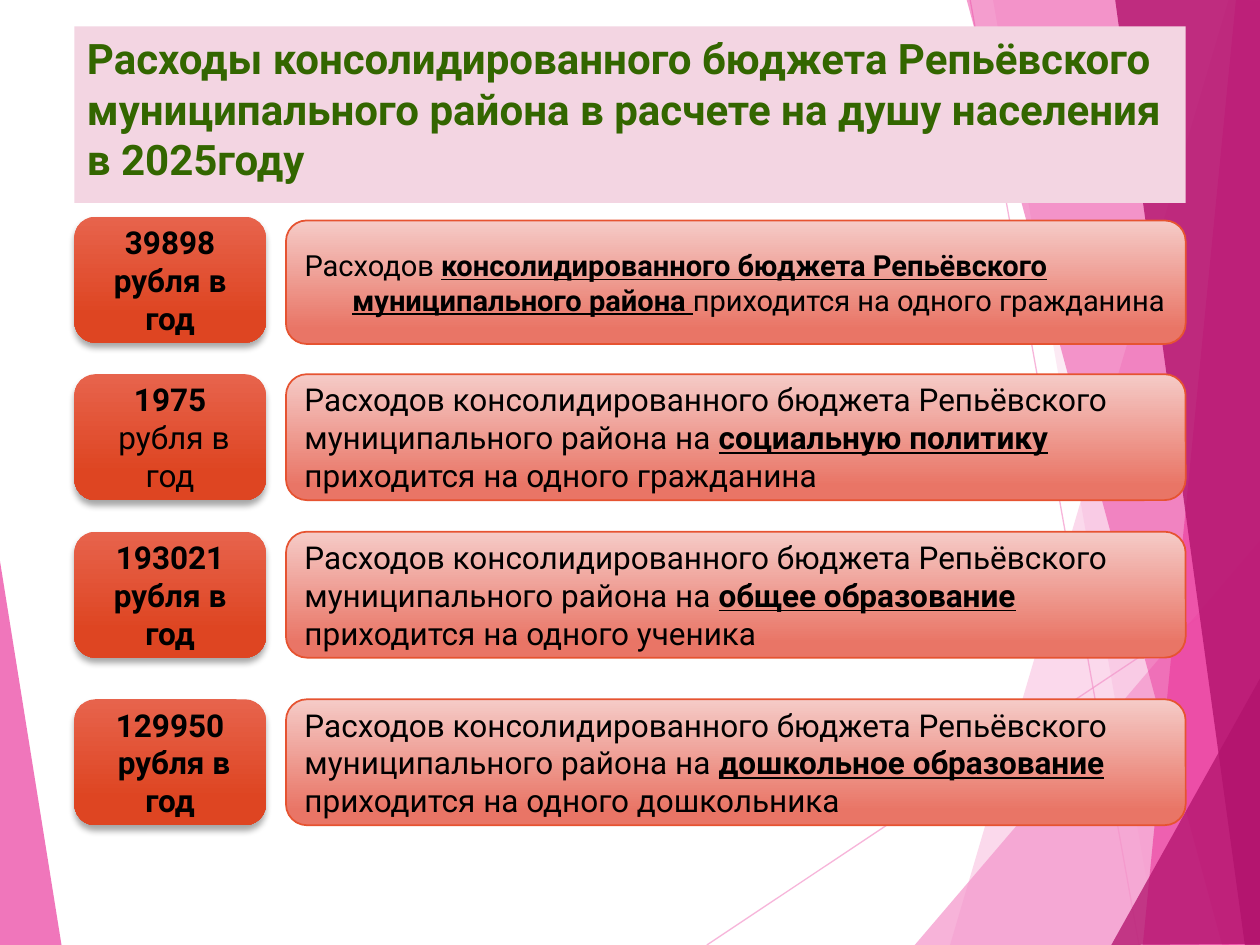
from dataclasses import dataclass

from lxml.etree import SubElement
from pptx import Presentation
from pptx.dml.color import RGBColor
from pptx.enum.shapes import MSO_CONNECTOR, MSO_SHAPE
from pptx.enum.text import MSO_ANCHOR, MSO_AUTO_SIZE, PP_ALIGN
from pptx.oxml.ns import qn
from pptx.util import Inches, Pt


@dataclass(frozen=True)
class Theme:
    font: str = "Roboto"
    title_size: float = 24
    text_size: float = 18
    lead_size: float = 16.6
    title_text: str = "336600"
    title_fill: str = "F3D5E2"
    text: str = "000000"
    outline: str = "E65331"
    pale_pink: str = "F496CB"
    pink: str = "EB3D9F"
    magenta: str = "B2136D"
    card_gradient: tuple = ((0, "F5CBC7"), (0.88, "E97566"))
    amount_gradient: tuple = ((0, "E7634C"), (0.78, "DE4522"))


@dataclass(frozen=True)
class Facet:
    color: str
    opacity: int
    points: tuple


@dataclass(frozen=True)
class Expense:
    top: float
    amount: tuple  # paragraphs of (text, bold)
    before: str
    purpose: str
    after: str


THEME = Theme()
AMOUNT_LEFT, AMOUNT_WIDTH = 0.59, 1.52
CARD_LEFT, CARD_WIDTH = 2.27, 7.14
ROW_HEIGHT = 1
DISTRICT = "Расходов консолидированного бюджета Репьёвского муниципального района на "

RAYS = (((5.61, 7.5), (10.01, 4.57)), ((7.7, 0), (9.04, 7.5)))
FACETS = (
    Facet(THEME.pale_pink, 36, ((9.75, 0), (7.54, 7.5), (10.02, 7.51), (10.01, 0.01))),
    Facet(THEME.pale_pink, 20, ((7.88, -0.01), (9.19, 7.5), (10.01, 7.5), (10.01, -0.01))),
    Facet(THEME.pale_pink, 72, ((7.26, 7.5), (10, 4.29), (10.01, 7.5))),
    Facet(THEME.pink, 50, ((7.67, -0.01), (9.7, 7.5), (10.01, 7.49), (10.01, -0.01))),
    Facet(THEME.pink, 66, ((9.81, -0.01), (9.07, 7.5), (10.01, 7.5), (10, -0.01))),
    Facet(THEME.magenta, 80, ((8.85, -0.01), (9.88, 7.5), (10.02, 7.5), (10, -0.01))),
    Facet(THEME.magenta, 76, ((8.82, 7.5), (10.02, 5.35), (10.02, 7.49))),
    Facet(THEME.pink, 70, ((-0.01, 4.39), (0.49, 7.51), (-0.01, 7.5))),
)
LEAD = Expense(
    1.72, (("39898", True), ("рубля в год", True)), "Расходов ",
    "консолидированного бюджета Репьёвского муниципального района ",
    "приходится на одного гражданина")
EXPENSES = (
    Expense(2.97, (("1975", True), (" рубля в год", False)), DISTRICT,
            "социальную политику ", "приходится на одного гражданина"),
    Expense(4.22, (("193021 рубля в год", True),), DISTRICT,
            "общее образование ", "приходится на одного ученика"),
    Expense(5.55, (("129950", True), (" рубля в год", True)), DISTRICT,
            "дошкольное образование ", "приходится на одного дошкольника"),
)


def rgb(color: str) -> RGBColor:
    return RGBColor.from_string(color)


def set_alpha(fill_owner, percent: int) -> None:
    """Make every solid colour under the element translucent."""
    for color in fill_owner.iter(qn("a:srgbClr")):
        SubElement(color, qn("a:alpha"), val=str(percent * 1000))


def place(shape, left: float, top: float, width: float, height: float) -> None:
    shape.left, shape.top = Inches(left), Inches(top)
    shape.width, shape.height = Inches(width), Inches(height)


def draw_ray(slide, start: tuple, end: tuple) -> None:
    ray = slide.shapes.add_connector(
        MSO_CONNECTOR.STRAIGHT, *(Inches(value) for value in start + end))
    ray.line.color.rgb = rgb(THEME.pale_pink)
    ray.line.width = Pt(0.75)
    properties = ray._element.spPr
    set_alpha(properties, 70)
    SubElement(properties, qn("a:effectLst"))


def draw_facet(slide, facet: Facet) -> None:
    start, *rest = [(Inches(x), Inches(y)) for x, y in facet.points]
    builder = slide.shapes.build_freeform(*start)
    builder.add_line_segments(rest, close=True)
    shape = builder.convert_to_shape()
    shape.shadow.inherit = False
    shape.fill.solid()
    shape.fill.fore_color.rgb = rgb(facet.color)
    shape.line.fill.background()
    set_alpha(shape._element.spPr, facet.opacity)


def fill_gradient(shape, stops: tuple) -> None:
    shape.fill.gradient()
    shape.fill.gradient_angle = 270
    for stop, (position, color) in zip(shape.fill.gradient_stops, stops):
        stop.position = position
        stop.color.rgb = rgb(color)


def add_run(paragraph, text: str, size: float, color: str = THEME.text,
            bold: bool = False, underline: bool = False) -> None:
    run = paragraph.add_run()
    run.text = text
    run.font.name, run.font.size = THEME.font, Pt(size)
    run.font.color.rgb = rgb(color)
    run.font.bold, run.font.underline = bold, underline


def prepare_text(shape, anchor) -> None:
    frame = shape.text_frame
    frame.word_wrap = True
    frame.auto_size = MSO_AUTO_SIZE.NONE
    frame.vertical_anchor = anchor


def write_card(card, expense: Expense, size: float) -> None:
    """Style a description card and fill in its text."""
    fill_gradient(card, THEME.card_gradient)
    card.line.color.rgb = rgb(THEME.outline)
    card.line.width = Pt(1)
    prepare_text(card, MSO_ANCHOR.MIDDLE)
    paragraph = card.text_frame.paragraphs[0]
    paragraph.alignment = PP_ALIGN.LEFT
    add_run(paragraph, expense.before, size)
    add_run(paragraph, expense.purpose, size, bold=True, underline=True)
    add_run(paragraph, expense.after, size)


def add_rounded(slide, left: float, top: float, width: float):
    shape = slide.shapes.add_shape(
        MSO_SHAPE.ROUNDED_RECTANGLE, Inches(left), Inches(top), Inches(width), Inches(ROW_HEIGHT))
    shape.shadow.inherit = False
    return shape


def draw_amount(slide, expense: Expense) -> None:
    box = add_rounded(slide, AMOUNT_LEFT, expense.top, AMOUNT_WIDTH)
    fill_gradient(box, THEME.amount_gradient)
    box.line.fill.background()
    effects = box._element.spPr.find(qn("a:effectLst"))
    shadow = SubElement(effects, qn("a:outerShdw"), blurRad=str(Pt(4)), dist=str(Pt(3)),
                        dir="5400000", rotWithShape="0")
    SubElement(shadow, qn("a:srgbClr"), val="000000")
    set_alpha(effects, 35)
    prepare_text(box, MSO_ANCHOR.MIDDLE)
    frame = box.text_frame
    for index, (text, bold) in enumerate(expense.amount):
        paragraph = frame.add_paragraph() if index else frame.paragraphs[0]
        paragraph.alignment = PP_ALIGN.CENTER
        add_run(paragraph, text, THEME.text_size, bold=bold)


def write_title(title) -> None:
    place(title, AMOUNT_LEFT, 0.21, 8.82, 1.4)
    title.fill.solid()
    title.fill.fore_color.rgb = rgb(THEME.title_fill)
    prepare_text(title, MSO_ANCHOR.TOP)
    paragraph = title.text_frame.paragraphs[0]
    paragraph.alignment = PP_ALIGN.LEFT
    add_run(paragraph, "Расходы консолидированного бюджета Репьёвского муниципального района "
            "в расчете на душу населения в 2025году", THEME.title_size, THEME.title_text, bold=True)


def write_lead(body) -> None:
    """Turn the body placeholder into the first card, with a hanging indent."""
    place(body, CARD_LEFT, 1.75, CARD_WIDTH, 0.98)
    geometry = SubElement(body._element.spPr, qn("a:prstGeom"), prst="roundRect")
    SubElement(geometry, qn("a:avLst"))
    write_card(body, LEAD, THEME.lead_size)
    paragraph = body.text_frame.paragraphs[0]
    paragraph.space_before = Pt(10)
    properties = paragraph._p.get_or_add_pPr()
    properties.set("marL", str(Inches(0.38)))
    properties.set("indent", str(Inches(-0.38)))
    SubElement(properties, qn("a:buNone"))


def main() -> None:
    presentation = Presentation()
    presentation.slide_width, presentation.slide_height = Inches(10), Inches(7.5)
    slide = presentation.slides.add_slide(presentation.slide_layouts[1])
    title, body = slide.placeholders
    for start, end in RAYS:
        draw_ray(slide, start, end)
    for facet in FACETS:
        draw_facet(slide, facet)
    for placeholder in (title, body):  # bring in front of the facets
        slide.shapes._spTree.append(placeholder._element)
    write_title(title)
    write_lead(body)
    for expense in EXPENSES:
        write_card(add_rounded(slide, CARD_LEFT, expense.top, CARD_WIDTH), expense, THEME.text_size)
    for expense in (LEAD, *EXPENSES):
        draw_amount(slide, expense)
    presentation.save("out.pptx")


if __name__ == "__main__":
    main()
